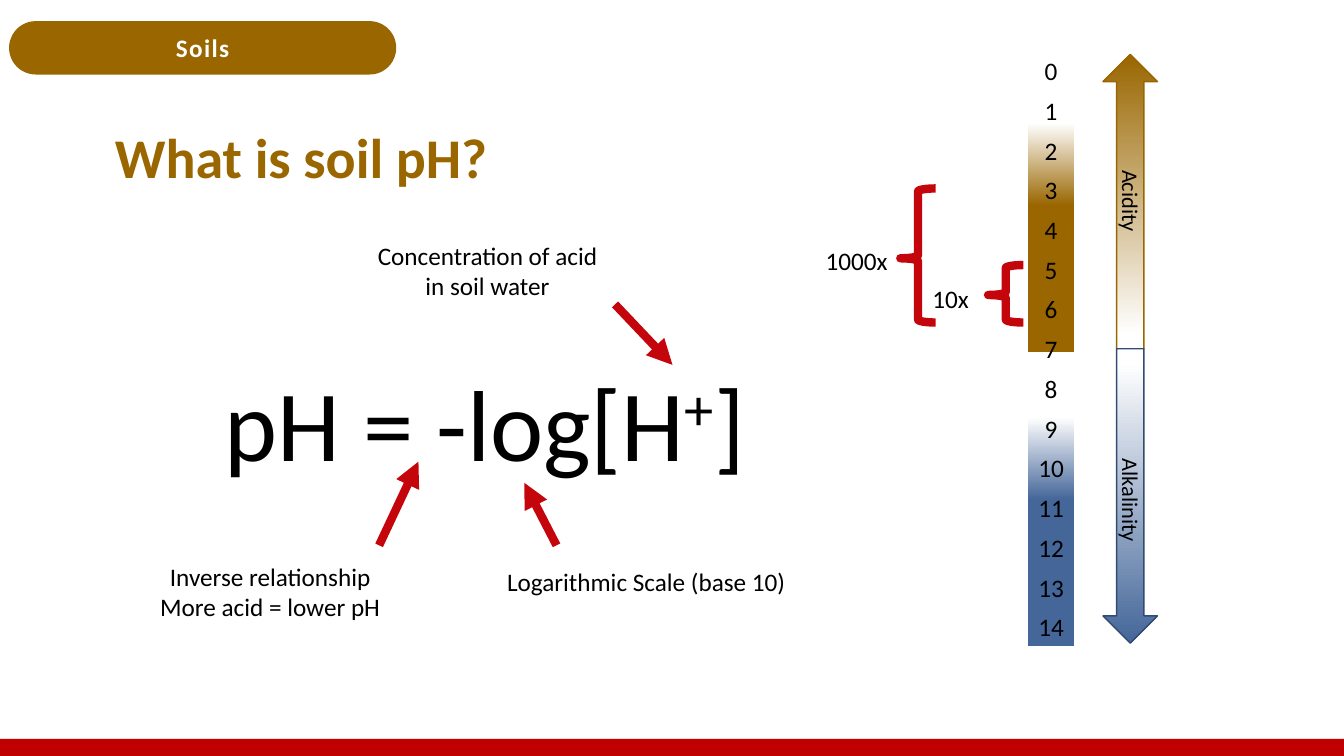
import pptx
import pptx.dml.color
import pptx.enum.shapes
import pptx.enum.text
import pptx.oxml
import pptx.oxml.ns
import pptx.util

PX = 9144
COLORS = {"acid": "996600", "alkaline": "446699", "alkaline_edge": "324B71", "mark": "C5050C",
          "footer": "C00000", "white": "FFFFFF", "black": "000000"}
SHAPES = pptx.enum.shapes.MSO_SHAPE
ALIGN = pptx.enum.text.PP_ALIGN
ANCHOR = pptx.enum.text.MSO_ANCHOR
NAMESPACE = pptx.oxml.ns.nsdecls("a")


def lengths(*values):
    """Turn px into EMU."""
    return [pptx.util.Emu(round(value * PX)) for value in values]


def color(name):
    """Look up a colour by name."""
    return pptx.dml.color.RGBColor.from_string(COLORS[name])


def set_all(target, values):
    """Set each attribute in a dict on an object."""
    for name, value in values.items():
        setattr(target, name, value)


def write(shape, lines, size=18, ink="black", bold=False, align=ALIGN.CENTER, spacing=None, **frame):
    """Fill a shape with paragraphs, each a list of (text, baseline) runs or a string."""
    text_frame = shape.text_frame
    set_all(text_frame, {"word_wrap": True, **frame})
    for index, line in enumerate(lines):
        paragraph = text_frame.add_paragraph() if index else text_frame.paragraphs[0]
        set_all(paragraph, {"alignment": align, "line_spacing": spacing, "space_before": pptx.util.Pt(0)})
        for text, baseline in [(line, 0)] if isinstance(line, str) else line:
            run = paragraph.add_run()
            run.text = text
            set_all(run.font, {"name": "Calibri", "size": pptx.util.Pt(size), "bold": bold})
            run.font.color.rgb = color(ink)
            if baseline:
                run.font._element.set("baseline", str(baseline * 1000))


def add_label(slide, box, lines, **format_values):
    """Add a text box."""
    label = slide.shapes.add_textbox(*lengths(*box))
    write(label, lines, **format_values)
    return label


def add_shape(slide, kind, box, fill=None, line=None, width=1):
    """Add a flat preset shape."""
    shape = slide.shapes.add_shape(kind, *lengths(*box))
    shape.shadow.inherit = False
    if fill:
        shape.fill.solid()
        shape.fill.fore_color.rgb = color(fill)
    else:
        shape.fill.background()
    if line:
        shape.line.color.rgb = color(line)
        shape.line.width = pptx.util.Pt(width)
    else:
        shape.line.fill.background()
    return shape


def fade(shape, stops, angle):
    """Give a shape a linear gradient of (percent, colour) stops."""
    listed = "".join(f'<a:gs pos="{position * 1000}"><a:srgbClr val="{COLORS[name]}"/></a:gs>'
                     for position, name in stops)
    gradient = pptx.oxml.parse_xml(
        f'<a:gradFill {NAMESPACE} rotWithShape="1"><a:gsLst>{listed}</a:gsLst>'
        f'<a:lin ang="{angle * 60000}" scaled="0"/></a:gradFill>')
    properties = shape._element.spPr
    properties.replace(properties.find(pptx.oxml.ns.qn("a:noFill")), gradient)


def add_arrow(slide, start, end):
    """Add a thick red arrow."""
    arrow = slide.shapes.add_connector(pptx.enum.shapes.MSO_CONNECTOR.STRAIGHT, *lengths(*start, *end))
    arrow.line.color.rgb = color("mark")
    arrow.line.width = pptx.util.Pt(6)
    arrow.line._get_or_add_ln().append(pptx.oxml.parse_xml(f'<a:tailEnd {NAMESPACE} type="triangle"/>'))
    arrow._element.spPr.append(pptx.oxml.parse_xml(f"<a:effectLst {NAMESPACE}/>"))


def add_frame(slide, width, height):
    """Place the footer strip, the topic pill and the title."""
    add_shape(slide, SHAPES.RECTANGLE, (0, height - 17, width, 17), "footer")
    pill = add_shape(slide, SHAPES.ROUNDED_RECTANGLE, (9, 21, 384, 53), "acid")
    pill.adjustments[0] = 0.5
    write(pill, ["Soils"], ink="white", bold=True, vertical_anchor=ANCHOR.MIDDLE)
    pill.text_frame.paragraphs[0].runs[0].font._element.set("spc", "100")
    title = slide.shapes.title
    set_all(title, dict(zip(("left", "top", "width", "height"), lengths(104, 87, 651, 145))))
    write(title, ["What is soil pH?"], size=40, ink="acid", bold=True, align=ALIGN.LEFT,
          spacing=0.9, vertical_anchor=ANCHOR.MIDDLE)


def add_formula(slide, left, top, width, height):
    """Place the pH formula with its three explanations."""
    add_label(slide, (left, top, width, height), [[("pH = -log[H", 0), ("+", 30), ("]", 0)]],
              size=72, spacing=0.9, vertical_anchor=ANCHOR.MIDDLE)
    notes = [
        ((0, 365, 284, 71), ["Inverse relationship", "More acid = lower pH"], (250, 354), (289, 271)),
        ((347, 370, 336, 40), ["Logarithmic Scale (base 10)"], (426, 354), (394, 292)),
        ((208, 46, 299, 71), ["Concentration of acid", "in soil water"], (484, 115), (541, 175)),
    ]
    for (x, y, *size), lines, start, end in notes:
        add_label(slide, (left + x, top + y, *size), lines)
        add_arrow(slide, (left + start[0], top + start[1]), (left + end[0], top + end[1]))


def add_scale(slide, left, top, width, height):
    """Place the pH scale: two bars, numbers 0 to 14 and two arrows."""
    half = height / 2
    arrow_center = left + 102
    halves = [("acid", "acid", "Acidity", 270, -4, 127), ("alkaline", "alkaline_edge", "Alkalinity", 90, -4, 132)]
    for index, (tone, edge, name, turn, shift, label_top) in enumerate(halves):
        half_top = top + index * half
        bar = add_shape(slide, SHAPES.RECTANGLE, (left, half_top, width, half), line="white")
        fade(bar, [(0, "white"), (22, "white"), (50, tone), (100, tone)], 90)
        arrow = add_shape(slide, SHAPES.RIGHT_ARROW,
                          (arrow_center - half / 2, half_top + shift + half / 2 - 27, half, 54), line=edge)
        arrow.rotation = turn
        fade(arrow, [(0, "white"), (5, "white"), (100, tone)], 0)
        label = add_label(slide, (arrow_center - 58, half_top + shift + label_top, 117, 37), [name], size=16)
        label.rotation = 90
    for number in range(15):
        number_width = 30 if number < 10 else 47
        add_label(slide, (left + (width - number_width) / 2, top - 8 + number * 39.43, number_width, 40),
                  [str(number)], margin_left=0, margin_right=0)


def add_brackets(slide, left, top, width, height):
    """Place the two braces that compare steps on the scale."""
    braces = [(width - 35, 57, "10x", 106, 89), (84, height, "1000x", 0, 51)]
    for x, brace_height, text, label_x, label_y in braces:
        brace = add_shape(slide, SHAPES.LEFT_BRACE, (left + x, top + height - brace_height, 35, brace_height),
                          line="mark", width=6)
        brace.adjustments[0], brace.adjustments[1] = 0.083, 0.521
        add_label(slide, (left + label_x, top + label_y, 84, 40), [text], align=ALIGN.LEFT, margin_right=0)


def main():
    """Build the soil pH slide."""
    presentation = pptx.Presentation()
    presentation.slide_width, presentation.slide_height = lengths(1333, 750)
    slide = presentation.slides.add_slide(presentation.slide_layouts[5])
    add_frame(slide, 1333, 750)
    add_formula(slide, 126, 187, 710, 476)
    add_scale(slide, 1019, 58, 47, 584)
    add_brackets(slide, 809, 187, 206, 133)
    presentation.save("out.pptx")


if __name__ == "__main__":
    main()
